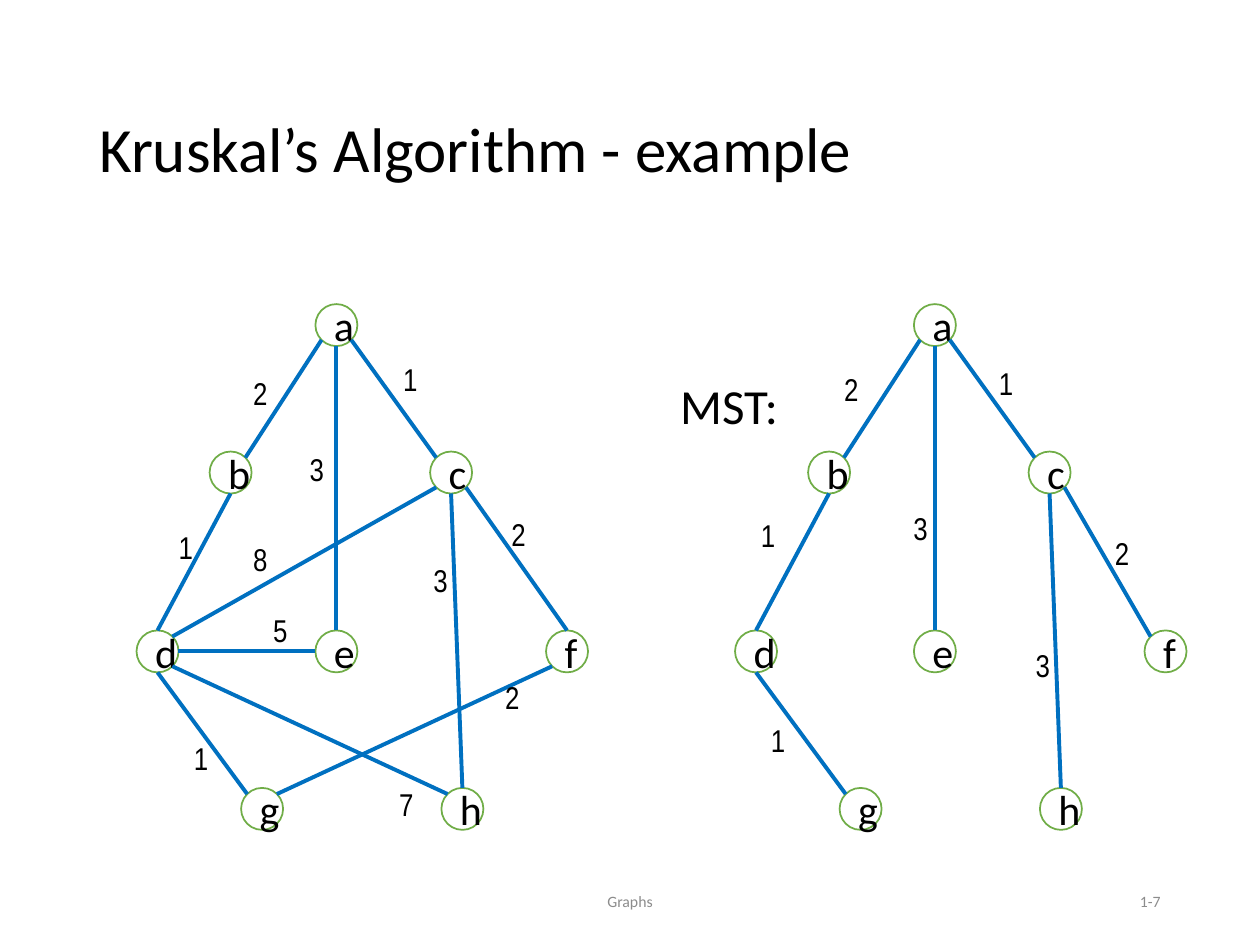
from math import sqrt

from lxml import etree
from pptx import Presentation
from pptx.dml.color import RGBColor
from pptx.enum.shapes import MSO_CONNECTOR, MSO_SHAPE
from pptx.enum.text import MSO_ANCHOR, MSO_AUTO_SIZE, PP_ALIGN
from pptx.oxml.ns import qn
from pptx.util import Inches, Pt

STRAIGHT = MSO_CONNECTOR.STRAIGHT
OVAL = MSO_SHAPE.OVAL
MIDDLE = MSO_ANCHOR.MIDDLE
FIT_SHAPE = MSO_AUTO_SIZE.SHAPE_TO_FIT_TEXT
LEFT, CENTER, RIGHT = PP_ALIGN.LEFT, PP_ALIGN.CENTER, PP_ALIGN.RIGHT

RADIUS = 1 / 6
DIAGONAL = 1 / sqrt(2)
SITES = {
    "N": (0, -1), "S": (0, 1), "W": (-1, 0), "E": (1, 0),
    "NW": (-DIAGONAL, -DIAGONAL), "NE": (DIAGONAL, -DIAGONAL),
    "SW": (-DIAGONAL, DIAGONAL), "SE": (DIAGONAL, DIAGONAL),
}

# Node centres in the full graph; the tree repeats them further right
NODES = {
    "a": (2.67, 2.58), "b": (1.83, 3.75), "c": (3.58, 3.75), "d": (1.25, 5.17),
    "e": (2.67, 5.17), "f": (4.5, 5.17), "g": (2.08, 6.42), "h": (3.67, 6.42),
}
TREE_SHIFT = 4.75

# Start node and site, end node and site, weight, left and top of the weight
GRAPH_EDGES = [
    ("a", "SE", "c", "NW", "1", 3.1, 2.81),
    ("a", "SW", "b", "NE", "2", 1.91, 2.92),
    ("a", "S", "e", "N", "3", 2.36, 3.52),
    ("b", "S", "d", "N", "1", 1.32, 4.14),
    ("c", "SW", "d", "NE", "8", 1.91, 4.24),
    ("c", "SE", "f", "N", "2", 3.96, 4.04),
    ("c", "S", "h", "N", "3", 3.34, 4.4),
    ("d", "E", "e", "W", "5", 2.07, 4.8),
    ("d", "S", "g", "NW", "1", 1.44, 5.82),
    ("d", "SE", "h", "NW", "7", 3.07, 6.18),
    ("f", "SW", "g", "NE", "2", 3.91, 5.33),
]
TREE_EDGES = [
    ("a", "SE", "c", "NW", "1", 7.83, 2.84),
    ("a", "SW", "b", "NE", "2", 6.6, 2.89),
    ("a", "S", "e", "N", "3", 7.15, 3.99),
    ("b", "S", "d", "N", "1", 5.94, 4.05),
    ("c", "SE", "f", "NW", "2", 8.75, 4.19),
    ("c", "S", "h", "N", "3", 8.12, 5.08),
    ("d", "S", "g", "NW", "1", 6.02, 5.67),
]


def color(hex_string):
    return RGBColor.from_string(hex_string)


class GraphSlide:
    """Draws on one slide in a fixed style."""

    text_font, weight_font = "Calibri", "Arial Narrow"
    black, gray, white = "000000", "8C8C8C", "FFFFFF"
    node_line, edge_line = "70AD47", "0070C0"

    def __init__(self, slide):
        self.slide = slide

    def set_text(self, shape, text, size, font=text_font, text_color=black, align=LEFT):
        shape.text_frame.text = text
        paragraph = shape.text_frame.paragraphs[0]
        paragraph.alignment = align
        run_font = paragraph.runs[0].font
        run_font.name = font
        run_font.size = Pt(size)
        run_font.color.rgb = color(text_color)
        return paragraph

    def block(self, text, left, top, width, height, size, **style):
        """Adds wrapped text, centred vertically in its box."""
        box = self.slide.shapes.add_textbox(
            Inches(left), Inches(top), Inches(width), Inches(height))
        box.text_frame.word_wrap = True
        box.text_frame.vertical_anchor = MIDDLE
        return self.set_text(box, text, size, **style)

    def label(self, text, left, top, width, height, size, **style):
        """Adds one unwrapped line whose box fits the text."""
        box = self.slide.shapes.add_textbox(
            Inches(left), Inches(top), Inches(width), Inches(height))
        box.text_frame.word_wrap = False
        box.text_frame.auto_size = FIT_SHAPE
        self.set_text(box, text, size, **style)

    def node(self, name, x, y):
        shape = self.slide.shapes.add_shape(
            OVAL, Inches(x - RADIUS), Inches(y - RADIUS),
            Inches(2 * RADIUS), Inches(2 * RADIUS))
        shape.shadow.inherit = False
        shape.fill.solid()
        shape.fill.fore_color.rgb = color(self.white)
        shape.line.color.rgb = color(self.node_line)
        shape.line.width = Pt(1)
        shape.text_frame.word_wrap = True
        shape.text_frame.vertical_anchor = MIDDLE
        self.set_text(shape, name, 24, align=CENTER)

    def edge(self, start, end):
        connector = self.slide.shapes.add_connector(
            STRAIGHT, *(Inches(value) for value in (*start, *end)))
        connector.line.color.rgb = color(self.edge_line)
        connector.line.width = Pt(2.25)
        etree.SubElement(connector._element.spPr, qn("a:effectLst"))

    def graph(self, edges, shift=0):
        def site_point(name, site):
            x, y = NODES[name]
            across, down = SITES[site]
            return x + shift + RADIUS * across, y + RADIUS * down

        for name, (x, y) in NODES.items():
            self.node(name, x + shift, y)
        for start, start_site, end, end_site, weight, left, top in edges:
            self.edge(site_point(start, start_site), site_point(end, end_site))
            self.label(weight, left, top, 0.32, 0.4, 18, font=self.weight_font)


def main():
    presentation = Presentation()
    presentation.slide_width = Inches(10)
    presentation.slide_height = Inches(7.5)
    blank_layout = presentation.slide_layouts[6]
    page = GraphSlide(presentation.slides.add_slide(blank_layout))

    title = page.block("Kruskal’s Algorithm - example", 0.69, 0.4, 8.62, 1.45, 36)
    title.line_spacing = 1.15
    title.space_before = Pt(6)
    page.block("Graphs", 3.31, 6.95, 3.38, 0.4, 9, text_color=page.gray, align=CENTER)
    page.block("1-7", 7.06, 6.95, 2.25, 0.4, 9, text_color=page.gray, align=RIGHT)
    page.label("MST:", 5.3, 2.93, 0.99, 0.57, 28)
    page.graph(GRAPH_EDGES)
    page.graph(TREE_EDGES, TREE_SHIFT)

    presentation.save("out.pptx")


if __name__ == "__main__":
    main()
